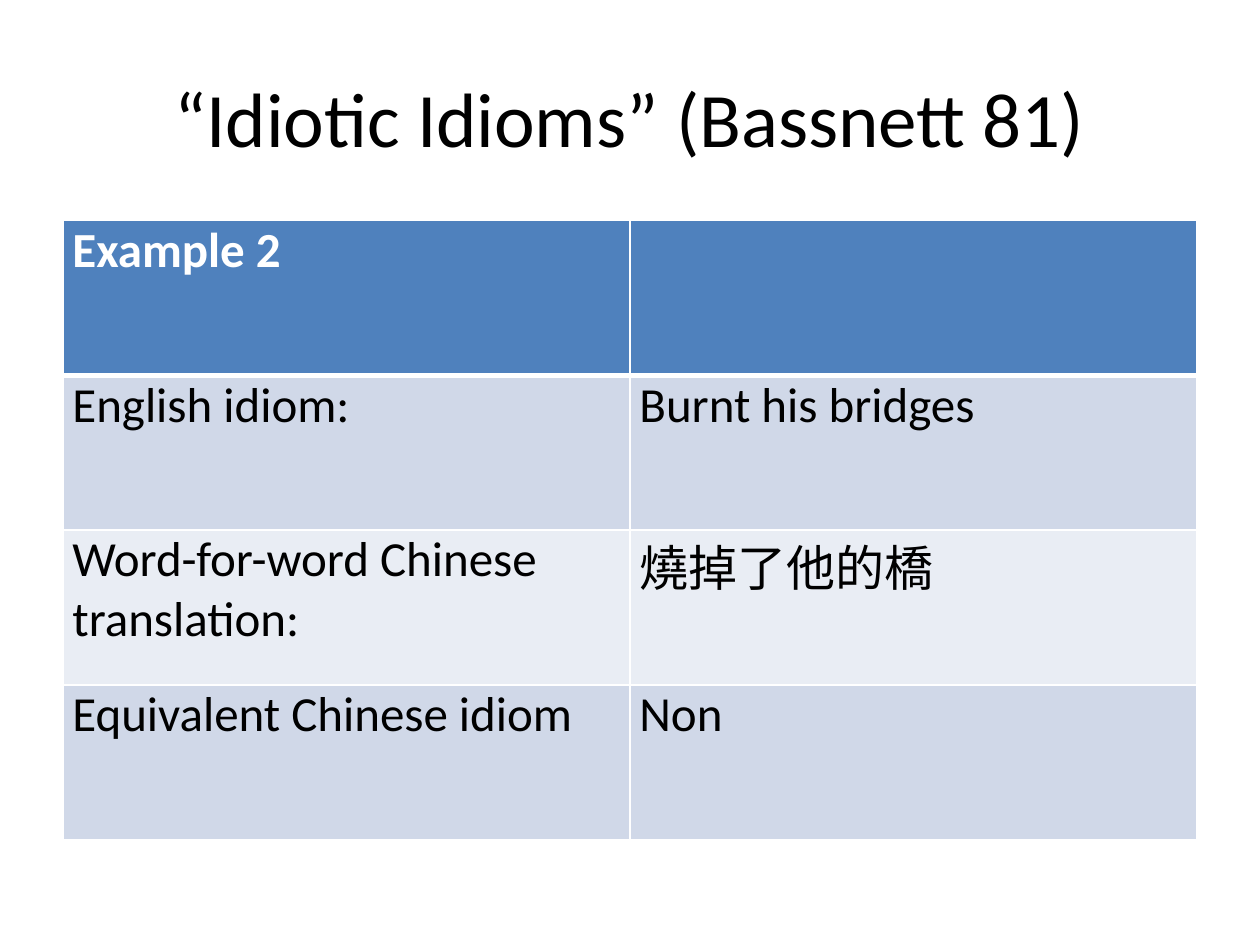
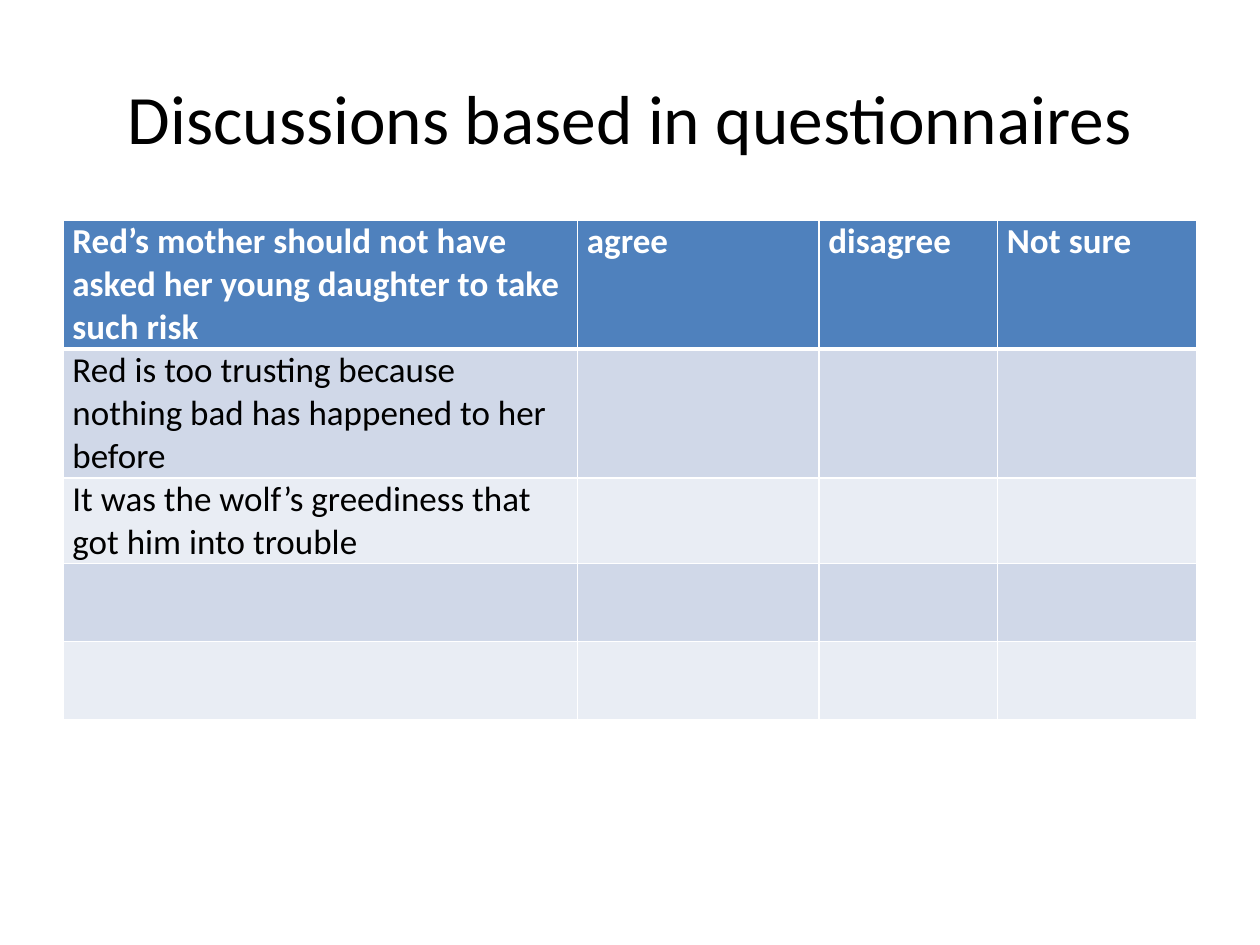
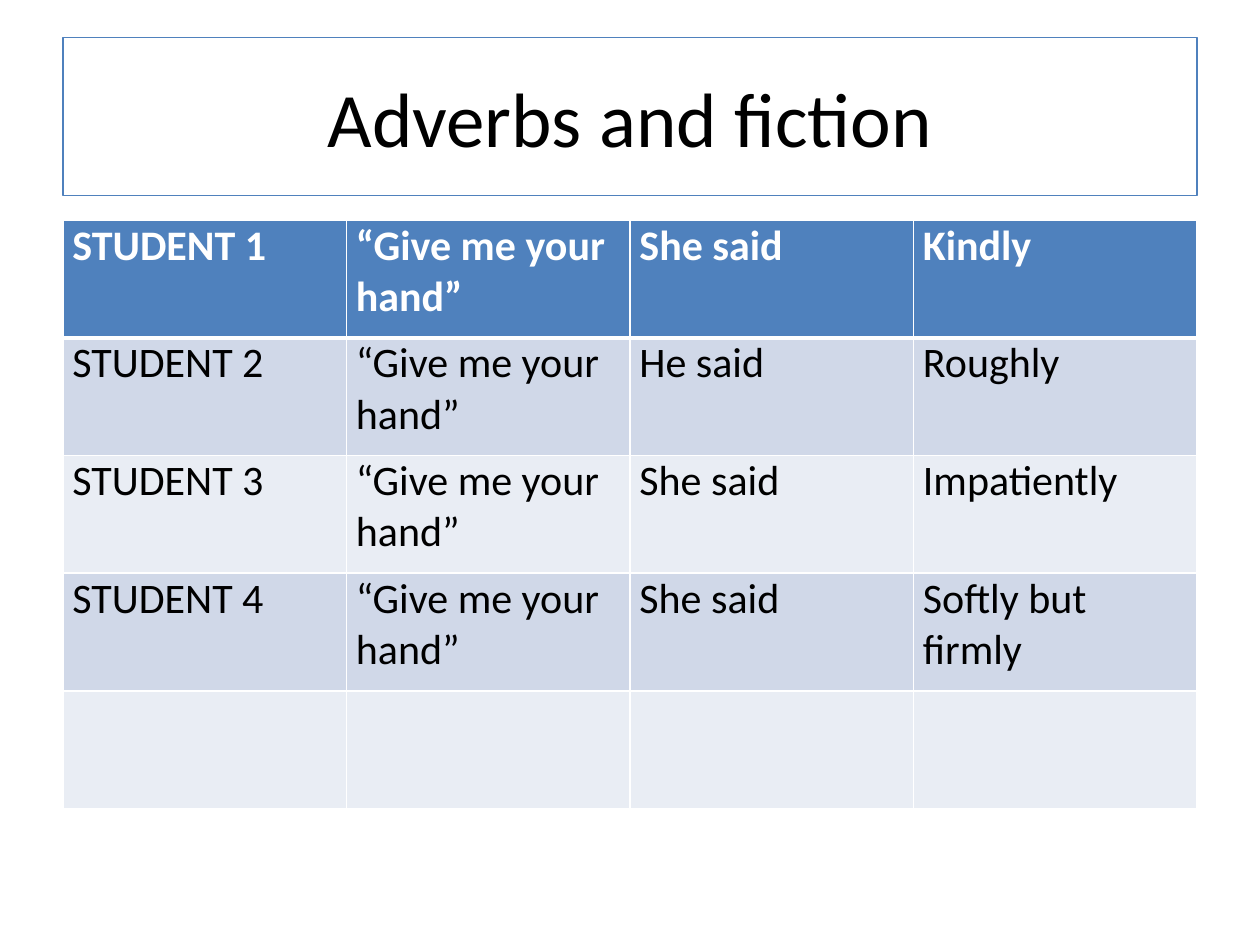
from lxml.etree import SubElement
from pptx import Presentation
from pptx.dml.color import RGBColor
from pptx.enum.text import MSO_ANCHOR, PP_ALIGN
from pptx.oxml.ns import qn
from pptx.util import Pt

COLORS = {"header": "4F81BD", "odd": "D0D8E8", "even": "E9EDF4",
          "light": "FFFFFF", "dark": "000000"}
FONT = "Calibri"
LEFT, WIDTH = 36, 648
TITLE_TOP, TITLE_HEIGHT = 21.6, 90
TABLE_TOP = 126
MARGINS = {"margin_left": Pt(5.4), "margin_right": Pt(5.4),
           "margin_top": 0, "margin_bottom": 0}
TITLE_PLACE = {"left": Pt(LEFT), "top": Pt(TITLE_TOP),
               "width": Pt(WIDTH), "height": Pt(TITLE_HEIGHT)}


def color(name):
    """Return a palette colour."""
    return RGBColor.from_string(COLORS[name])


def apply(target, values):
    """Set every given attribute on the target."""
    for name, value in values.items():
        setattr(target, name, value)


def add_span(para, text, size, ink, bold=False, font=FONT):
    """Add a formatted run to a paragraph."""
    span = para.add_run()
    span.text = text
    apply(span.font, {"name": font, "size": Pt(size), "bold": bold})
    span.font.color.rgb = color(ink)


def add_page(deck, title, size=44, framed=False):
    """Add a page with its title, framed by a thin line if wanted."""
    page = deck.slides.add_slide(deck.slide_layouts[5])
    box = page.shapes.title
    apply(box, TITLE_PLACE)
    box.text_frame.vertical_anchor = MSO_ANCHOR.MIDDLE
    para = box.text_frame.paragraphs[0]
    para.alignment = PP_ALIGN.CENTER
    add_span(para, title, size, "dark")
    if framed:
        box.line.color.rgb = color("header")
        box.line.width = Pt(0.75)
    return page


def add_borders(cell, top, bottom):
    """Draw white borders around a cell."""
    properties = cell._tc.get_or_add_tcPr()
    for side, width in {"L": 1, "R": 1, "T": top, "B": bottom}.items():
        line = SubElement(properties, qn(f"a:ln{side}"), w=str(Pt(width)))
        fill = SubElement(line, qn("a:solidFill"))
        SubElement(fill, qn("a:srgbClr"), val=COLORS["light"])


def fill_cell(cell, spans, row, size):
    """Format a cell for its row and write its (text, font) spans."""
    header = row == 0
    add_borders(cell, 3 if row == 1 else 1, 3 if header else 1)
    apply(cell, MARGINS)
    cell.fill.solid()
    cell.fill.fore_color.rgb = color("header" if header else "odd" if row % 2 else "even")
    para = cell.text_frame.paragraphs[0]
    for text, font in spans:
        add_span(para, text, size, "light" if header else "dark", header, font)


def add_grid(page, rows, widths, row_height, size):
    """Add a banded table; short rows end in blank cells."""
    frame = page.shapes.add_table(len(rows), len(widths), Pt(LEFT), Pt(TABLE_TOP),
                                  Pt(WIDTH), Pt(row_height * len(rows)))
    table = frame.table
    for column, width in zip(table.columns, widths):
        column.width = Pt(width)
    for number, texts in enumerate(rows):
        table.rows[number].height = Pt(row_height)
        for index in range(len(widths)):
            content = texts[index] if index < len(texts) else []
            spans = [(content, FONT)] if isinstance(content, str) else content
            fill_cell(table.cell(number, index), spans, number, size)


def main():
    """Build the deck."""
    deck = Presentation()
    apply(deck, {"slide_width": Pt(720), "slide_height": Pt(540)})

    page = add_page(deck, "“Idiotic Idioms” (Bassnett 81)")
    add_grid(page, [
        ["Example 2"],
        ["English idiom:", "Burnt his bridges"],
        ["Word-for-word Chinese translation:", [("燒掉了他的", "Karla"), ("橋", FONT)]],
        ["Equivalent Chinese idiom", "Non"],
    ], [WIDTH / 2] * 2, 88.5, 28)

    page = add_page(deck, "Discussions based in questionnaires", size=39.6)
    add_grid(page, [
        ["Red’s mother should not have asked her young daughter to take such risk",
         "agree", "disagree", "Not sure"],
        ["Red is too trusting because nothing bad has happened to her before"],
        ["It was the wolf’s greediness that got him into trouble"],
        [],
        [],
    ], [294, 138, 102, 114], 44.7, 20)

    page = add_page(deck, "Adverbs and fiction", framed=True)
    answers = [("She said", "Kindly"), ("He said", "Roughly"),
               ("She said", "Impatiently"), ("She said", "Softly but firmly")]
    rows = [[f"STUDENT {number}", "“Give me your hand”", *answer]
            for number, answer in enumerate(answers, 1)]
    add_grid(page, rows + [[]], [WIDTH / 4] * 4, 67.2, 24)

    deck.save("out.pptx")


if __name__ == "__main__":
    main()
